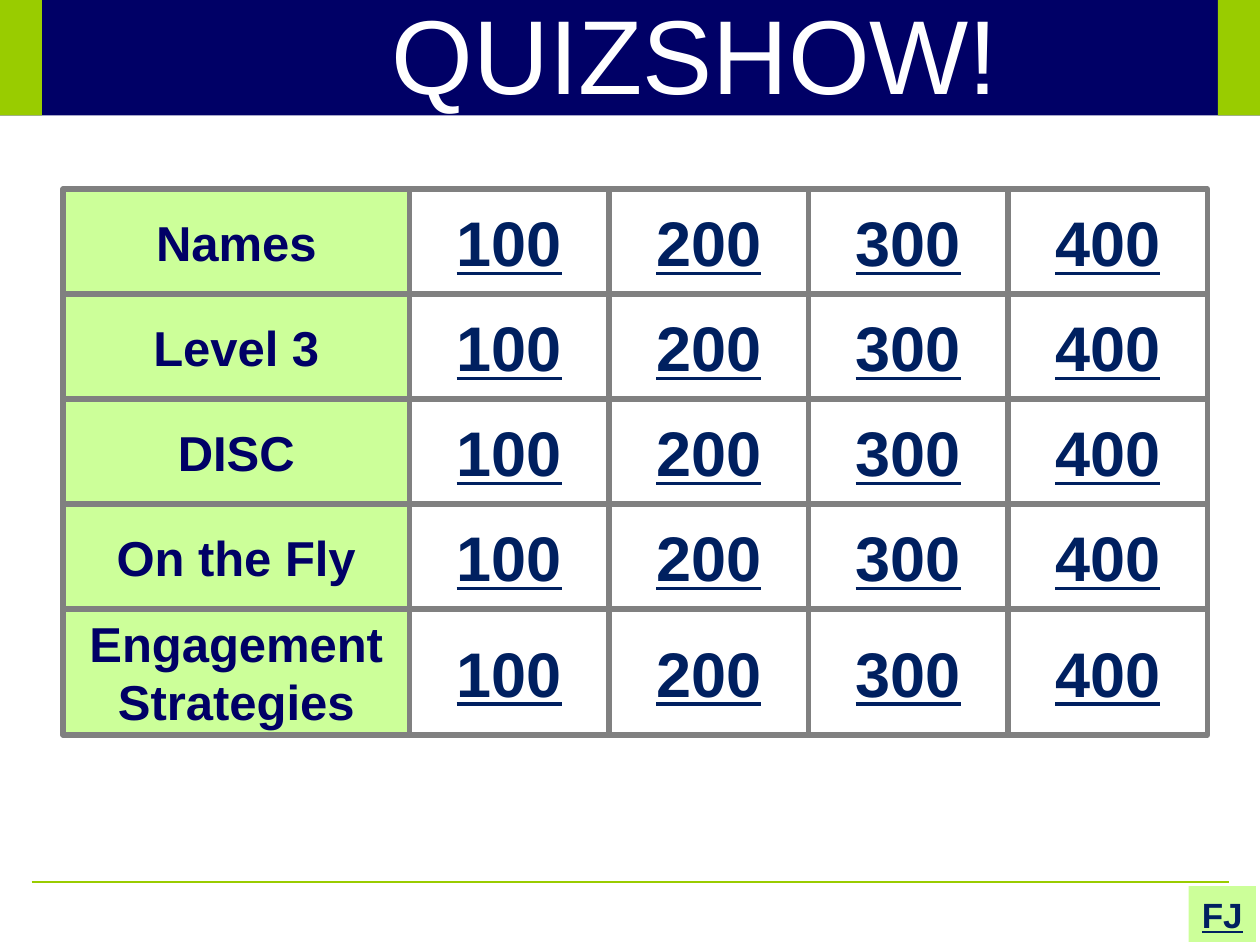
from lxml import etree
from pptx import Presentation
from pptx.dml.color import RGBColor as Rgb
from pptx.enum.shapes import MSO_CONNECTOR as Connector, MSO_SHAPE as Shape
from pptx.enum.text import MSO_ANCHOR as Anchor, PP_ALIGN as Align
from pptx.oxml.ns import qn
from pptx.util import Inches, Pt

COLORS = {"navy": "000066", "green": "99CC00", "mint": "CCFF99",
          "grey": "808080", "ink": "002060", "white": "FFFFFF"}
COLUMNS, ROWS = 120, 90  # slide grid, twelve units to the inch

TITLE = {"size": Pt(60)}
CATEGORY = {"size": Pt(28), "bold": True}
POINTS = {"size": Pt(36), "bold": True, "underline": True}
FINAL = {"size": Pt(20), "bold": True, "underline": True}


class Board:
    def __init__(self, deck):
        self.font = "Arial"
        self.column = deck.slide_width / COLUMNS
        self.row = deck.slide_height / ROWS
        self.slide = deck.slides.add_slide(deck.slide_layouts[6])

    def place(self, left, top, width, height):
        return (round(left * self.column), round(top * self.row),
                round(width * self.column), round(height * self.row))

    def label(self, frame, words, color, style, wrap=False):
        frame.word_wrap = wrap
        frame.vertical_anchor = Anchor.MIDDLE
        paragraph = frame.paragraphs[0]
        paragraph.text = words
        paragraph.alignment = Align.CENTER
        for run in paragraph.runs:
            run.font.color.rgb = Rgb.from_string(COLORS[color])
            for name, value in {"name": self.font, **style}.items():
                setattr(run.font, name, value)

    def block(self, area, fill=None, border=None, kind=Shape.RECTANGLE):
        block = self.slide.shapes.add_shape(kind, *self.place(*area))
        block.shadow.inherit = False
        if fill:
            block.fill.solid()
            block.fill.fore_color.rgb = Rgb.from_string(COLORS[fill])
        else:
            block.fill.background()
        if border:
            block.line.color.rgb = Rgb.from_string(COLORS[border])
            block.line.width = Pt(3)
        else:
            block.line.fill.background()
        return block

    def button(self, area, words, color, style, fill=None):
        button = self.block(area, fill, "grey", Shape.ACTION_BUTTON_CUSTOM)
        self.label(button.text_frame, words, color, style)

    def text(self, area, words, color, style):
        box = self.slide.shapes.add_textbox(*self.place(*area))
        self.label(box.text_frame, words, color, style, wrap=True)

    def rule(self, left, right, row, color):
        x, y, width, _ = self.place(left, row, right - left, 0)
        rule = self.slide.shapes.add_connector(
            Connector.STRAIGHT, x, y, x + width, y)
        rule.line.color.rgb = Rgb.from_string(COLORS[color])
        rule.line.width = Pt(0.75)
        etree.SubElement(rule.element.spPr, qn("a:effectLst"))


def main():
    deck = Presentation()
    deck.slide_width, deck.slide_height = Inches(10), Inches(7.5)
    board = Board(deck)

    # Header band, side bars and footer rule
    board.block((0, 0, COLUMNS, 11), "navy")
    board.rule(3, 117, 84, "green")
    for left in (0, COLUMNS - 4):
        board.block((left, 0, 4, 11), "green")
    board.text((15.1, -1, 102.2, 12), "QUIZSHOW!", "white", TITLE)

    # Question board: a category, then its point values
    categories = ("Names", "Level 3", "DISC", "On the Fly",
                  "Engagement\nStrategies")
    for index, category in enumerate(categories):
        top = 18 + 10 * index
        height = 12 if category == categories[-1] else 10
        for step in range(4):
            board.button((39 + 19 * step, top, 19, height),
                         str(100 * (step + 1)), "ink", POINTS)
        board.button((6, top, 33, height), category, "navy", CATEGORY, "mint")

    # Final round button
    final = board.block((113.2, 84.4, 6.4, 5.3), "mint")
    board.label(final.text_frame, "FJ", "ink", FINAL)

    deck.save("out.pptx")


if __name__ == "__main__":
    main()
